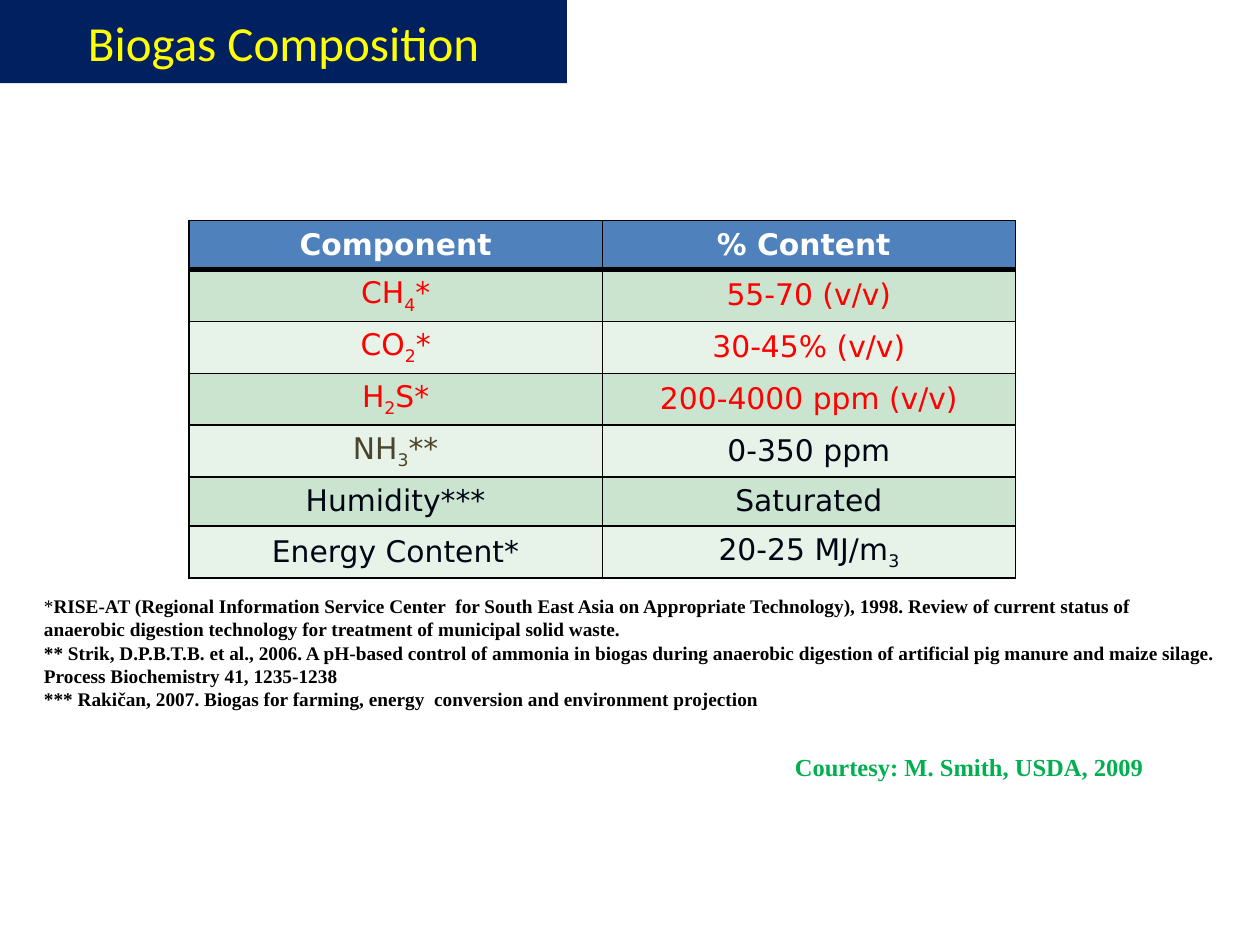
from lxml.etree import SubElement
from pptx import Presentation
from pptx.dml.color import RGBColor
from pptx.enum.text import MSO_ANCHOR as Anchor, MSO_AUTO_SIZE as AutoSize, PP_ALIGN as Align
from pptx.oxml.ns import qn
from pptx.util import Inches, Pt

COLORS = {
    "navy": "002060", "yellow": "FFFF00", "white": "FFFFFF", "black": "000000",
    "header": "4F81BD", "band_dark": "CBE4D0", "band_light": "E7F2E9",
    "red": "FF0000", "olive": "4A452A", "ink": "000514", "green": "00B050",
}
SERIF = "Times New Roman"
COMPOSITION = [
    ("Component", "white", "% Content ", "white"),
    ("CH_4_*", "red", "55-70 (v/v)", "red"),
    ("CO_2_*", "red", "30-45% (v/v)", "red"),
    ("H_2_S*", "red", "200-4000 ppm (v/v)", "red"),
    ("NH_3_**", "olive", "0-350 ppm", "ink"),
    ("Humidity***", "ink", "Saturated", "ink"),
    ("Energy Content*", "ink", "20-25 MJ/m_3_", "ink"),
]
REFERENCES = [
    "RISE-AT (Regional Information Service Center  for South East Asia on Appropriate "
    "Technology), 1998. Review of current status of",
    "anaerobic digestion technology for treatment of municipal solid waste.",
    "** Strik, D.P.B.T.B. et al., 2006. A pH-based control of ammonia in biogas during "
    "anaerobic digestion of artificial pig manure and maize silage.",
    "Process Biochemistry 41, 1235-1238",
    "*** Rakičan, 2007. Biogas for farming, energy  conversion and environment projection",
]


def rgb(name):
    """Return the named colour."""
    return RGBColor.from_string(COLORS[name])


def write(paragraph, text, *, size, font, color, bold=False, align=Align.LEFT):
    """Add formatted text, with subscripts enclosed in underscores."""
    paragraph.alignment = align
    for index, piece in enumerate(text.split("_")):
        if piece:
            run = paragraph.add_run()
            run.text = piece
            run.font.size = Pt(size)
            run.font.name = font
            run.font.bold = bold
            run.font.color.rgb = rgb(color)
            if index % 2:
                run._r.get_or_add_rPr().set("baseline", "-25000")


def add_title(slide, text):
    """Set the title as a coloured banner in the top left corner."""
    title = slide.shapes.title
    title.left, title.top = Inches(0), Inches(0)
    title.width, title.height = Inches(4.5), Inches(0.66)
    title.fill.solid()
    title.fill.fore_color.rgb = rgb("navy")
    title.text_frame.vertical_anchor = Anchor.MIDDLE
    write(title.text_frame.paragraphs[0], text, size=28, font="Calibri",
          color="yellow", align=Align.CENTER)


def set_borders(cell, widths):
    """Draw black cell borders with the given widths in points."""
    properties = cell._tc.get_or_add_tcPr()
    for position, (side, width) in enumerate(widths.items()):
        line = SubElement(properties, qn(f"a:ln{side}"), w=str(Pt(width)))
        fill = SubElement(line, qn("a:solidFill"))
        SubElement(fill, qn("a:srgbClr"), val=COLORS["black"])
        properties.insert(position, line)


def add_composition_table(slide):
    """Add the banded table of biogas components."""
    row_height = Inches(0.39)
    table = slide.shapes.add_table(
        len(COMPOSITION), 2, Inches(1.5), Inches(1.75),
        Inches(6.56), row_height * len(COMPOSITION)).table
    for row, (component, component_color, content, content_color) in enumerate(COMPOSITION):
        table.rows[row].height = row_height
        band = "header" if row == 0 else ("band_light", "band_dark")[row % 2]
        widths = {"L": 1, "R": 1, "T": 3 if row == 1 else 1, "B": 3 if row == 0 else 1}
        entries = [(component, component_color), (content, content_color)]
        for column, (text, color) in enumerate(entries):
            cell = table.cell(row, column)
            cell.vertical_anchor = Anchor.MIDDLE
            cell.fill.solid()
            cell.fill.fore_color.rgb = rgb(band)
            set_borders(cell, widths)
            write(cell.text_frame.paragraphs[0], text, size=17, font="DejaVu Sans",
                  color=color, bold=row == 0, align=Align.CENTER)


def add_text_frame(slide, left, top, width, height, wrap):
    """Add a text box that fits its text and return its frame."""
    box = slide.shapes.add_textbox(Inches(left), Inches(top), Inches(width), Inches(height))
    box.text_frame.word_wrap = wrap
    box.text_frame.auto_size = AutoSize.SHAPE_TO_FIT_TEXT
    return box.text_frame


def add_references(slide):
    """List the sources marked by asterisks in the table."""
    frame = add_text_frame(slide, 0.25, 4.67, 9.62, 1.03, wrap=False)
    style = {"size": 11, "font": SERIF, "color": "black"}
    write(frame.paragraphs[0], "*", **style)
    for index, reference in enumerate(REFERENCES):
        paragraph = frame.add_paragraph() if index else frame.paragraphs[0]
        write(paragraph, reference, bold=True, **style)


def add_courtesy(slide, text):
    """Add the courtesy line below the references."""
    frame = add_text_frame(slide, 6.21, 5.92, 3.48, 0.34, wrap=True)
    write(frame.paragraphs[0], text, size=14, font=SERIF, color="green", bold=True)


def main():
    """Build and save the biogas composition slide."""
    deck = Presentation()
    deck.slide_width, deck.slide_height = Inches(10), Inches(7.5)
    slide = deck.slides.add_slide(deck.slide_layouts.get_by_name("Title Only"))
    add_title(slide, "Biogas Composition")
    add_composition_table(slide)
    add_references(slide)
    add_courtesy(slide, "Courtesy: M. Smith, USDA, 2009")
    deck.save("out.pptx")


if __name__ == "__main__":
    main()
